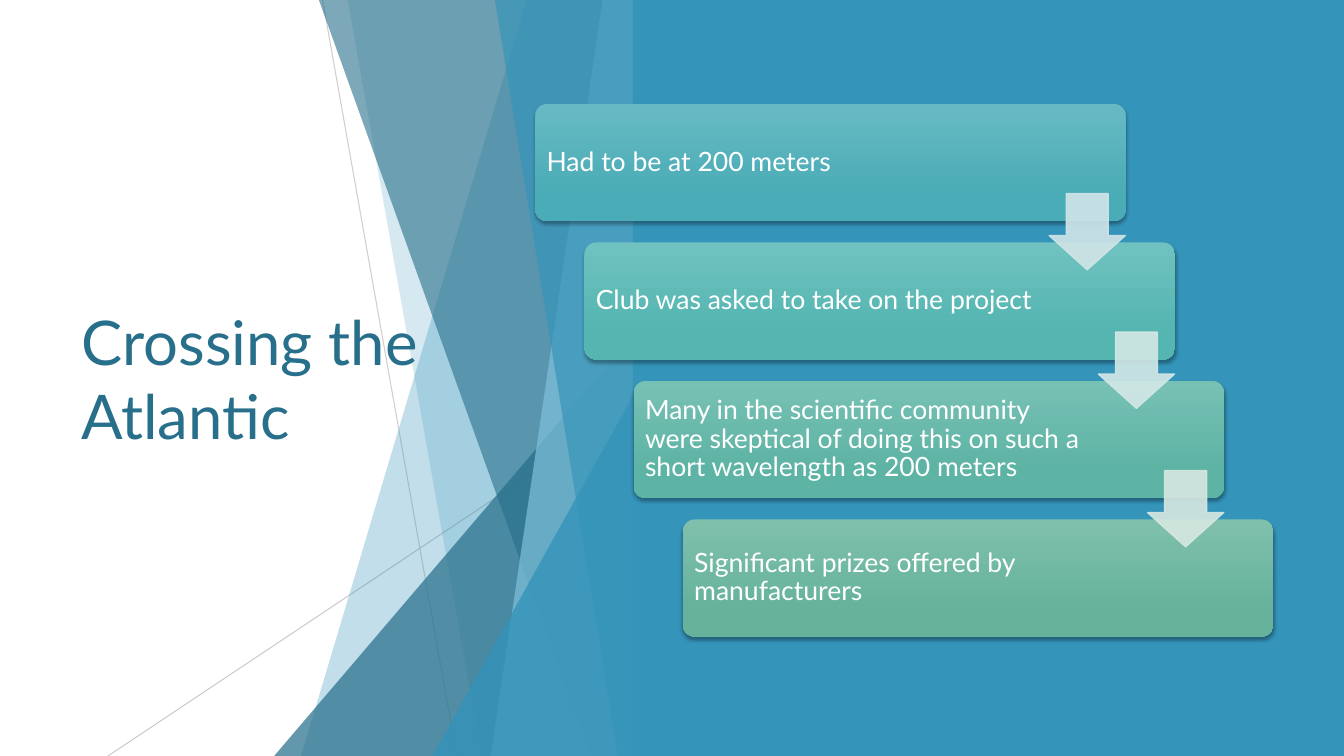
from dataclasses import dataclass
from lxml.etree import SubElement
from pptx import Presentation
from pptx.dml.color import RGBColor as RGB
from pptx.enum.shapes import MSO_CONNECTOR as Line, MSO_SHAPE as Shape
from pptx.enum.text import MSO_ANCHOR as Anchor, MSO_AUTO_SIZE as AutoSize, PP_ALIGN as Align
from pptx.oxml.ns import qn
from pptx.util import Cm, Pt


@dataclass(frozen=True)
class Theme:
    font: str = "Lato"
    title_size: int = 44
    card_size: int = 19
    white: str = "FFFFFF"
    blue: str = "3494BA"
    deep_blue: str = "276F8B"
    pale_blue: str = "7FC1DB"
    grey: str = "BFBFBF"
    shadow: str = "000000"
    cards: tuple = (("67BAC3", "4AACB6"), ("6FC2BF", "54B5B1"),
                    ("77C1B4", "5DB3A4"), ("7FC0AC", "66B29B"))
    arrows: tuple = ("D1E5E8", "D4E8E6", "D6E8E1")


def set_opacity(shape, percent):
    for colour in shape._element.spPr.iter(qn("a:srgbClr")):
        SubElement(colour, qn("a:alpha"), val=str(percent * 1000))


def fill_plain(shape, colour, percent=100):
    shape.shadow.inherit = False
    shape.line.fill.background()
    shape.fill.solid()
    shape.fill.fore_color.rgb = RGB.from_string(colour)
    if percent < 100:
        set_opacity(shape, percent)


theme = Theme()
deck = Presentation()
deck.slide_width, deck.slide_height = Cm(33.87), Cm(19.05)
slide = deck.slides.add_slide(deck.slide_layouts[5])
shapes = slide.shapes
panel_left, bottom = 15.95, 19.05

for x1, y1, x2, y2, percent in [(8.13, 0, 11.51, bottom, 75),
                                (panel_left, 10.24, 2.72, bottom, 80)]:
    ray = shapes.add_connector(Line.STRAIGHT, Cm(x1), Cm(y1), Cm(x2), Cm(y2))
    ray.line.color.rgb = RGB.from_string(theme.grey)
    ray.line.width = Pt(0.75)
    set_opacity(ray, percent)
    SubElement(ray._element.spPr, qn("a:effectLst"))

facets = [
    ("band", 13.28, 7.59, theme.blue, 30),
    ("band", 8.76, 12.14, theme.blue, 20),
    ("corner", 6.91, 8.46, theme.deep_blue, 72),
    ("band", 8.03, 14.88, theme.deep_blue, 60),
    ("band", 15.19, 12.37, theme.pale_blue, 70),
    ("band", 12.47, 15.57, theme.blue, 65),
    ("corner", 10.9, 9.98, theme.blue, 80),
]
for kind, first, second, colour, percent in facets:
    if kind == "band":
        outline = shapes.build_freeform(Cm(first), Cm(-0.02))
        outline.add_line_segments([(Cm(panel_left), Cm(-0.02)), (Cm(panel_left), Cm(bottom)),
                                   (Cm(second), Cm(bottom))], close=True)
        facet = outline.convert_to_shape()
    else:
        facet = shapes.add_shape(Shape.ISOSCELES_TRIANGLE, Cm(first), Cm(second),
                                 Cm(panel_left - first), Cm(bottom - second))
        facet.adjustments[0] = 1
    fill_plain(facet, colour, percent)

title = shapes.title
title.left, title.top, title.width, title.height = Cm(1.8), Cm(3.84), Cm(9.86), Cm(11.38)
title.text_frame.text = "Crossing the Atlantic"
title.text_frame.auto_size = AutoSize.NONE
title.text_frame.word_wrap = True
title.text_frame.vertical_anchor = Anchor.MIDDLE
heading = title.text_frame.paragraphs[0]
heading.alignment = Align.LEFT
heading.font.name = theme.font
heading.font.size = Pt(theme.title_size)
heading.font.color.rgb = RGB.from_string(theme.deep_blue)
shapes._spTree.append(title._element)

panel = shapes.add_shape(Shape.RECTANGLE, Cm(panel_left), 0, Cm(33.87 - panel_left), Cm(bottom))
fill_plain(panel, theme.blue)

events = [
    "Had to be at 200 meters",
    "Club was asked to take on the project",
    "Many in the scientific community were skeptical of doing this on such a "
    "short wavelength as 200 meters",
    "Significant prizes offered by manufacturers",
]
card_left, card_top, step_x, step_y = 13.49, 2.62, 1.24, 3.49

for i, (event, gradient) in enumerate(zip(events, theme.cards)):
    card = shapes.add_shape(Shape.ROUNDED_RECTANGLE, Cm(card_left + i * step_x),
                            Cm(card_top + i * step_y), Cm(14.88), Cm(2.95))
    card.adjustments[0] = 0.1
    card.line.fill.background()
    card.fill.gradient()
    card.fill.gradient_angle = 270
    for stop, position, colour in zip(card.fill.gradient_stops, (0, 0.78), gradient):
        stop.position = position
        stop.color.rgb = RGB.from_string(colour)
    card.shadow.inherit = False
    effects = card._element.spPr.find(qn("a:effectLst"))
    shadow = SubElement(effects, qn("a:outerShdw"), blurRad=str(Pt(3)), dist=str(Pt(2)),
                        dir="5400000", algn="ctr", rotWithShape="0")
    shade = SubElement(shadow, qn("a:srgbClr"), val=theme.shadow)
    SubElement(shade, qn("a:alpha"), val="35000")

    frame = card.text_frame
    frame.text = event
    frame.word_wrap = True
    frame.vertical_anchor = Anchor.MIDDLE
    frame.margin_left = frame.margin_top = frame.margin_bottom = Cm(0.2)
    frame.margin_right = Cm(3.41)
    line = frame.paragraphs[0]
    line.alignment = Align.LEFT
    line.line_spacing = 0.9
    line.font.name = theme.font
    line.font.size = Pt(theme.card_size)
    line.font.color.rgb = RGB.from_string(theme.white)

for i, colour in enumerate(theme.arrows):
    arrow = shapes.add_shape(Shape.DOWN_ARROW, Cm(card_left + 12.95 + i * step_x),
                             Cm(card_top + 2.26 + i * step_y), Cm(1.92), Cm(1.92))
    arrow.adjustments[0], arrow.adjustments[1] = 0.55, 0.45
    fill_plain(arrow, colour)
    arrow.line.color.rgb = RGB.from_string(colour)
    arrow.line.width = Pt(1)
    set_opacity(arrow, 90)

deck.save("out.pptx")
